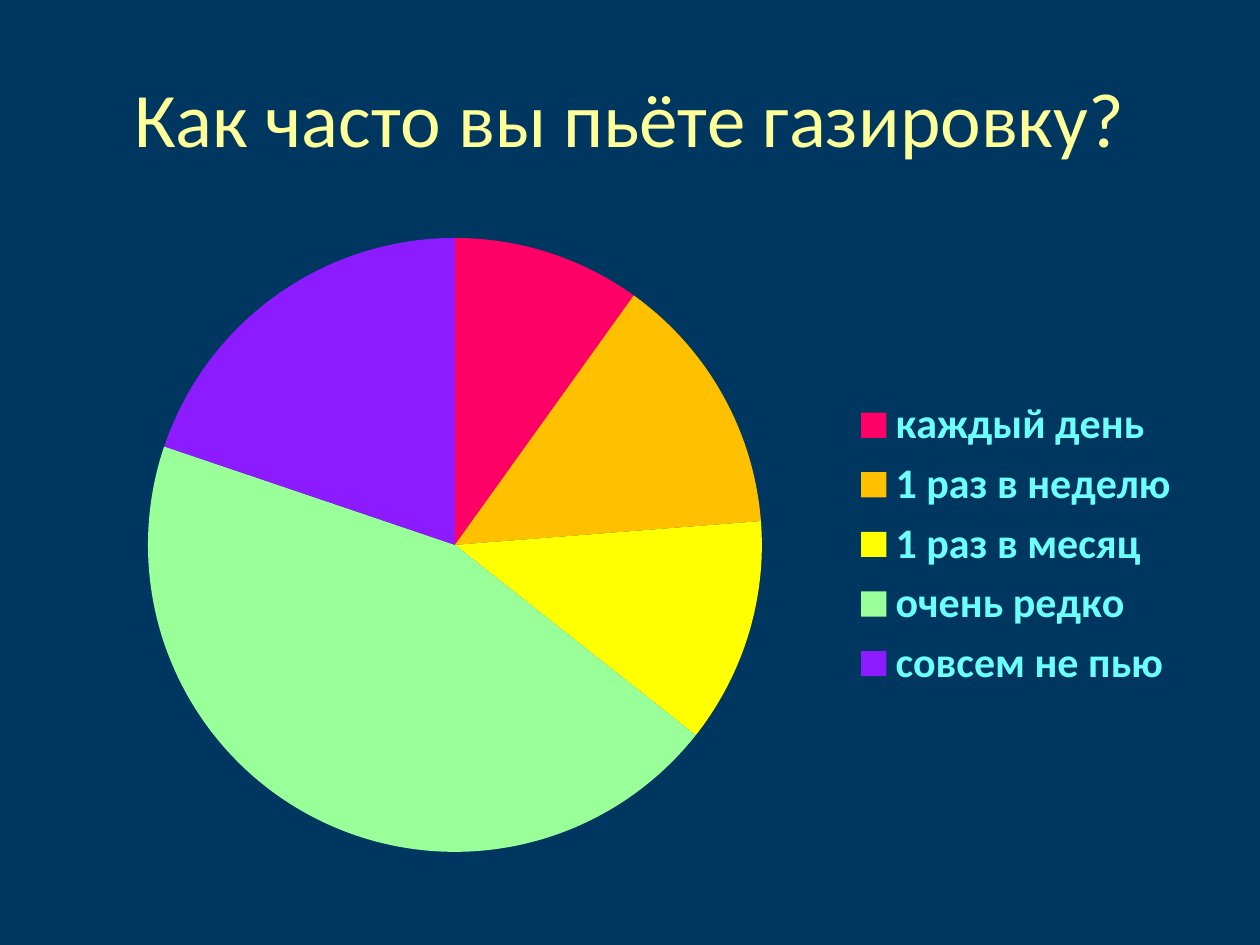
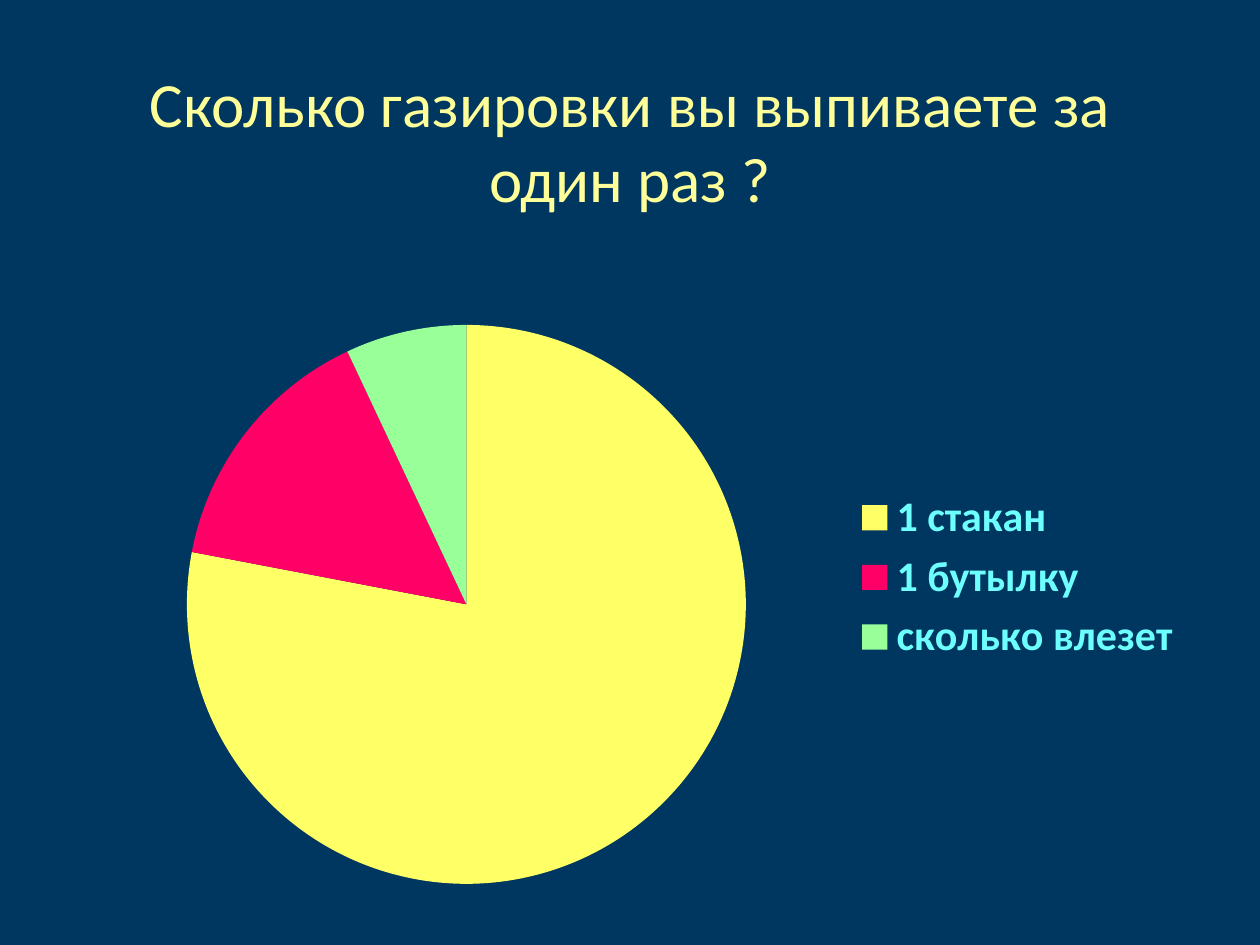
from dataclasses import dataclass

from lxml.etree import SubElement
from pptx import Presentation
from pptx.chart.data import CategoryChartData
from pptx.dml.color import RGBColor
from pptx.enum.chart import XL_CHART_TYPE as ChartType, XL_LEGEND_POSITION as LegendPosition
from pptx.enum.text import MSO_ANCHOR as Anchor, MSO_AUTO_SIZE as AutoSize, PP_ALIGN as Align
from pptx.oxml.ns import qn
from pptx.util import Pt

SURVEY = [
    {
        "question": "Как часто вы пьёте газировку?",
        "title_size": 44,
        "title_box": (63, 38, 1134, 158),
        "chart_box": (63, 220, 1134, 649),
        "pie_box": (148, 238, 614, 614),
        "answers": [
            ("каждый день", 10, "FF0066"),
            ("1 раз в неделю", 14, "FFC000"),
            ("1 раз в месяц", 12, "FFFF00"),
            ("очень редко", 45, "99FF99"),
            ("совсем не пью ", 20, "8D1BFF"),
        ],
    },
    {
        "question": "Сколько газировки вы выпиваете за один раз ?",
        "title_size": 36,
        "title_box": (63, 38, 1134, 204),
        "chart_box": (63, 252, 1134, 651),
        "pie_box": (82, 325, 769, 559),
        "answers": [
            ("1 стакан", 78, "FFFF66"),
            ("1 бутылку", 15, "FF0066"),
            ("сколько влезет", 7, "99FF99"),
        ],
    },
]


@dataclass(frozen=True)
class Theme:
    font: str = "Calibri"
    background: str = "003760"
    title: str = "FFFF99"
    chart_text: str = "6DFFFE"
    chart_size: int = 18
    legend_size: int = 24


THEME = Theme()
PAGE = (1260, 945)
TITLE_ONLY = 5


def px(length):
    return round(length * 914400 / 126)


def paint(fill, color):
    fill.solid()
    fill.fore_color.rgb = RGBColor.from_string(color)


def style(font, size, color, bold=False):
    font.name = THEME.font
    font.size = Pt(size)
    font.bold = bold
    font.color.rgb = RGBColor.from_string(color)


def set_title(page, question, size, box):
    title = page.shapes.title
    title.left, title.top, title.width, title.height = map(px, box)
    frame = title.text_frame
    frame.text = question
    frame.auto_size = AutoSize.NONE
    frame.vertical_anchor = Anchor.MIDDLE
    paragraph = frame.paragraphs[0]
    paragraph.alignment = Align.CENTER
    style(paragraph.font, size, THEME.title)


def place_pie(chart, chart_box, pie_box):
    left, top, width, height = chart_box
    pie_left, pie_top, pie_width, pie_height = pie_box
    plot_area = chart.element.find(".//" + qn("c:plotArea"))
    layout = plot_area.find(qn("c:layout"))
    if layout is None:
        layout = SubElement(plot_area, qn("c:layout"))
        plot_area.insert(0, layout)
    manual = SubElement(layout, qn("c:manualLayout"))
    settings = {
        "layoutTarget": "inner",
        "xMode": "edge",
        "yMode": "edge",
        "x": (pie_left - left) / width,
        "y": (pie_top - top) / height,
        "w": pie_width / width,
        "h": pie_height / height,
    }
    for name, value in settings.items():
        SubElement(manual, qn("c:" + name)).set("val", str(value))


def add_pie(page, answers, chart_box, pie_box):
    labels, values, colors = zip(*answers)
    data = CategoryChartData()
    data.categories = labels
    data.add_series("Series 1", values)
    chart = page.shapes.add_chart(ChartType.PIE, *map(px, chart_box), data).chart
    chart.has_title = False
    style(chart.font, THEME.chart_size, THEME.chart_text)
    chart.has_legend = True
    chart.legend.position = LegendPosition.RIGHT
    chart.legend.include_in_layout = False
    style(chart.legend.font, THEME.legend_size, THEME.chart_text, bold=True)
    plot = chart.plots[0]
    plot.vary_by_categories = True
    for index, color in enumerate(colors):
        paint(plot.series[0].points[index].format.fill, color)
    place_pie(chart, chart_box, pie_box)


def main():
    deck = Presentation()
    deck.slide_width, deck.slide_height = map(px, PAGE)
    paint(deck.slide_master.background.fill, THEME.background)
    for item in SURVEY:
        page = deck.slides.add_slide(deck.slide_layouts[TITLE_ONLY])
        set_title(page, item["question"], item["title_size"], item["title_box"])
        add_pie(page, item["answers"], item["chart_box"], item["pie_box"])
    deck.save("out.pptx")


if __name__ == "__main__":
    main()
